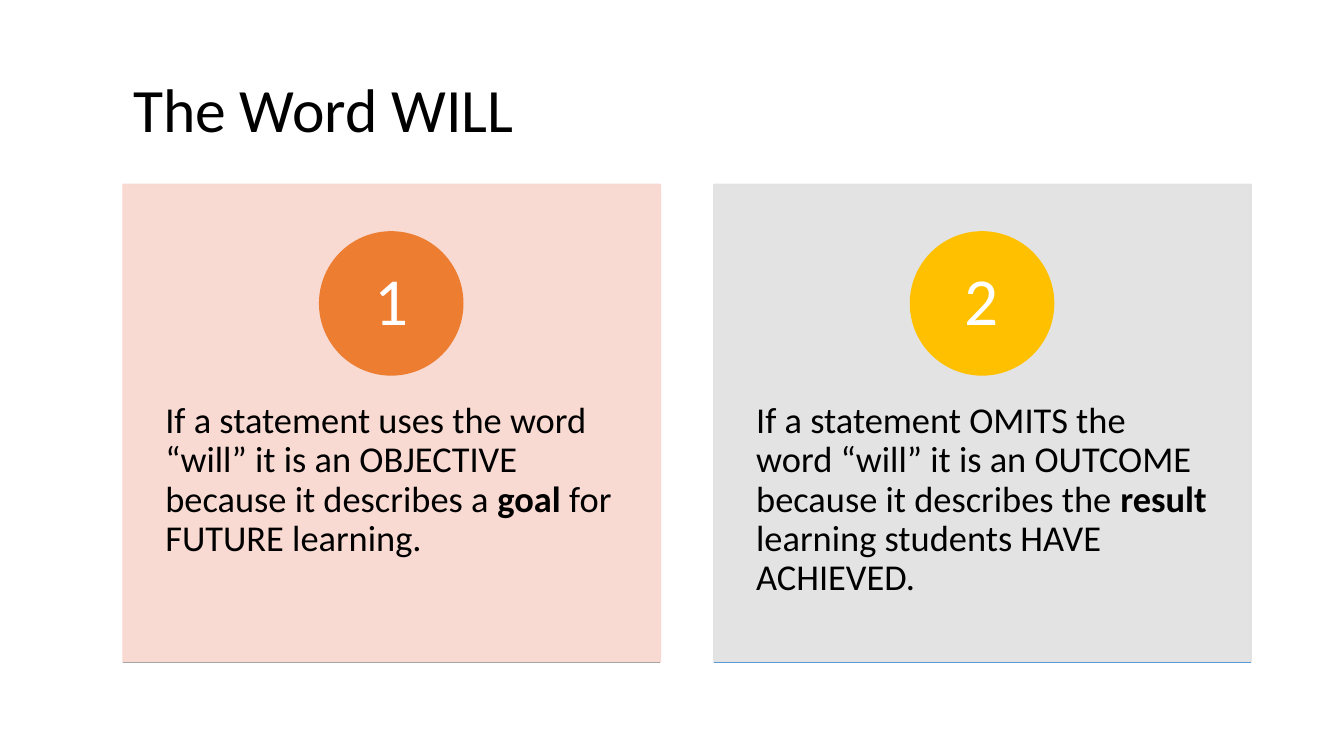
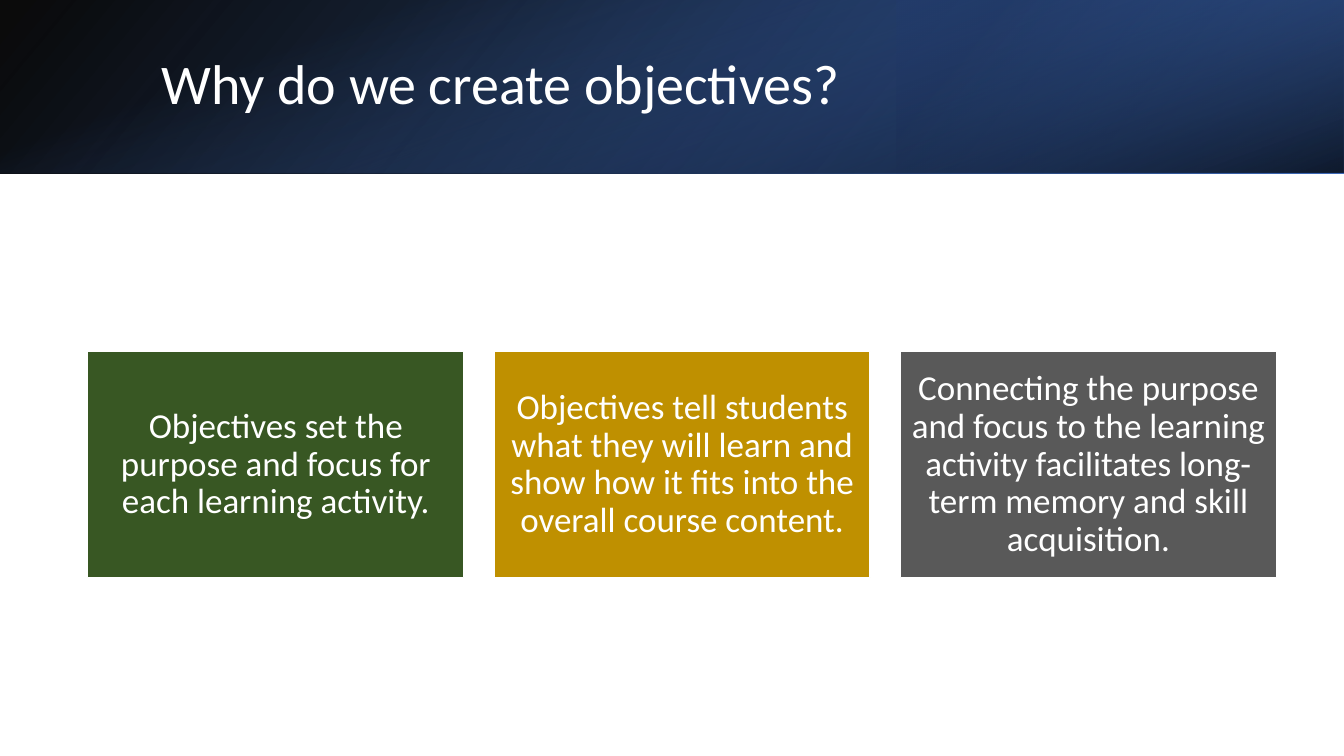
from lxml import etree
from pptx import Presentation
from pptx.dml.color import RGBColor
from pptx.enum.shapes import MSO_CONNECTOR, MSO_SHAPE
from pptx.enum.text import MSO_ANCHOR, MSO_AUTO_SIZE, PP_ALIGN
from pptx.oxml.ns import qn
from pptx.util import Pt

RECT, OVAL = MSO_SHAPE.RECTANGLE, MSO_SHAPE.OVAL
STRAIGHT = MSO_CONNECTOR.STRAIGHT
TOP, MIDDLE = MSO_ANCHOR.TOP, MSO_ANCHOR.MIDDLE
LEFT, CENTER = PP_ALIGN.LEFT, PP_ALIGN.CENTER
NO_AUTOFIT = MSO_AUTO_SIZE.NONE

EMU_PER_PX = 9144
SLIDE_W, SLIDE_H = 1333, 750
BAND_H = 172
FONT = "Calibri"
TITLE_ONLY = 5

COLORS = {
    "black": "000000",
    "white": "FFFFFF",
    "blush": "F8D7CE",
    "mist": "E1E1E1",
    "orange": "ED7D31",
    "gold": "FFC000",
    "gray": "A5A5A5",
    "sky": "5B9BD5",
    "blue": "4472C4",
    "deep_blue": "2F5597",
    "navy": "203864",
    "green": "385723",
    "mustard": "BF9000",
    "charcoal": "595959",
}

STATEMENTS = [
    ("blush", "orange", "gray", [
        ("If a statement uses the word “will” it is an OBJECTIVE because it describes a ", False),
        ("goal", True),
        (" for FUTURE learning.", False),
    ]),
    ("mist", "gold", "sky", [
        ("If a statement OMITS the word “will” it is an OUTCOME because it describes the ", False),
        ("result ", True),
        ("learning students HAVE ACHIEVED.", False),
    ]),
]

REASONS = [
    ("green", "Objectives set the purpose and focus for each learning activity."),
    ("mustard", "Objectives tell students what they will learn and show how it fits "
                "into the overall course content."),
    ("charcoal", "Connecting the purpose and focus to the learning activity facilitates "
                 "long-term memory and skill acquisition."),
]

BAND_LAYERS = [
    ((0, 0, SLIDE_W, BAND_H), 0, True, 140,
     [(0, "black", 96), (100, "deep_blue", 100)]),
    ((889, 0, 444, BAND_H), 180, True, 320,
     [(19, "navy", 68), (100, "blue", 79)]),
    (((SLIDE_W - BAND_H) // 2, (BAND_H - SLIDE_W) // 2, BAND_H, SLIDE_W), 90, False, 340,
     [(23, "blue", 0), (99, "black", 74)]),
]


def px(length):
    return length * EMU_PER_PX


def rgb(color):
    return RGBColor.from_string(COLORS[color])


def set_opacity(color_element, percent):
    alpha = etree.SubElement(color_element, qn("a:alpha"))
    alpha.set("val", str(percent * 1000))


def write(shape, runs, size, color, align, anchor, insets):
    frame = shape.text_frame
    frame.word_wrap = True
    frame.auto_size = NO_AUTOFIT
    frame.vertical_anchor = anchor
    (frame.margin_left, frame.margin_top,
     frame.margin_right, frame.margin_bottom) = map(px, insets)
    paragraph = frame.paragraphs[0]
    paragraph.alignment = align
    paragraph.line_spacing = 0.9
    for text, bold in runs:
        run = paragraph.add_run()
        run.text = text
        run.font.name = FONT
        run.font.size = Pt(size)
        run.font.bold = bold
        run.font.color.rgb = rgb(color)


def add_panel(slide, kind, box, fill, outline, opacity=100):
    panel = slide.shapes.add_shape(kind, *map(px, box))
    panel.shadow.inherit = False
    panel.fill.solid()
    panel.fill.fore_color.rgb = rgb(fill)
    panel.line.color.rgb = rgb(outline)
    panel.line.width = Pt(1)
    if opacity < 100:
        for color_element in panel._element.spPr.iter(qn("a:srgbClr")):
            set_opacity(color_element, opacity)
    return panel


def add_rule(slide, left, top, width, color):
    rule = slide.shapes.add_connector(STRAIGHT, px(left), px(top), px(left + width), px(top))
    rule.line.color.rgb = rgb(color)
    rule.line.width = Pt(1)
    etree.SubElement(rule._element.spPr, qn("a:effectLst"))


def add_gradient_layer(slide, box, rotation, flipped, angle, stops):
    layer = slide.shapes.add_shape(RECT, *map(px, box))
    layer.shadow.inherit = False
    layer.rotation = rotation
    layer.line.fill.background()
    layer.fill.gradient()
    layer.fill.gradient_angle = 360 - angle
    for stop, (position, color, _) in zip(layer.fill.gradient_stops, stops):
        stop.position = position / 100
        stop.color.rgb = rgb(color)
    properties = layer._element.spPr
    for color_element, (_, _, opacity) in zip(properties.iter(qn("a:srgbClr")), stops):
        set_opacity(color_element, opacity)
    if flipped:
        properties.find(qn("a:xfrm")).set("flipH", "1")


def set_title(slide, text, box, size, color):
    title = slide.shapes.title
    title.left, title.top, title.width, title.height = map(px, box)
    write(title, [(text, False)], size, color, LEFT, MIDDLE, (10, 5, 10, 5))
    return title


def add_statement_card(slide, index, fill, accent, rule, runs):
    left, top, width, height = 122 + index * 586, 183, 533, 474
    badge_size = 142
    card = add_panel(slide, RECT, (left, top, width, height), fill, fill, 90)
    write(card, runs, 26, "black", LEFT, TOP, (42, 216, 42, 36))
    badge_left = left + (width - badge_size) // 2
    badge = add_panel(slide, OVAL, (badge_left, 230, badge_size, badge_size), accent, accent)
    write(badge, [(str(index + 1), False)], 48, "white", CENTER, MIDDLE, (0, 0, 0, 0))
    add_rule(slide, left, top + height, width, rule)


def add_reason_box(slide, index, fill, text):
    reason = add_panel(slide, RECT, (87 + index * 403, 349, 373, 224), fill, "white")
    write(reason, [(text, False)], 25, "white", CENTER, MIDDLE, (10, 10, 10, 10))


def build_will_slide(slide):
    set_title(slide, "The Word WILL", (122, 56, 1119, 111), 44, "black")
    for index, statement in enumerate(STATEMENTS):
        add_statement_card(slide, index, *statement)


def build_reasons_slide(slide):
    for layer in BAND_LAYERS:
        add_gradient_layer(slide, *layer)
    title = set_title(slide, "Why do we create objectives?", (150, 38, 1098, 96), 40, "white")
    slide.shapes._spTree.append(title._element)
    for index, reason in enumerate(REASONS):
        add_reason_box(slide, index, *reason)


def main():
    deck = Presentation()
    deck.slide_width, deck.slide_height = px(SLIDE_W), px(SLIDE_H)
    for build in (build_will_slide, build_reasons_slide):
        build(deck.slides.add_slide(deck.slide_layouts[TITLE_ONLY]))
    deck.save("out.pptx")


if __name__ == "__main__":
    main()
